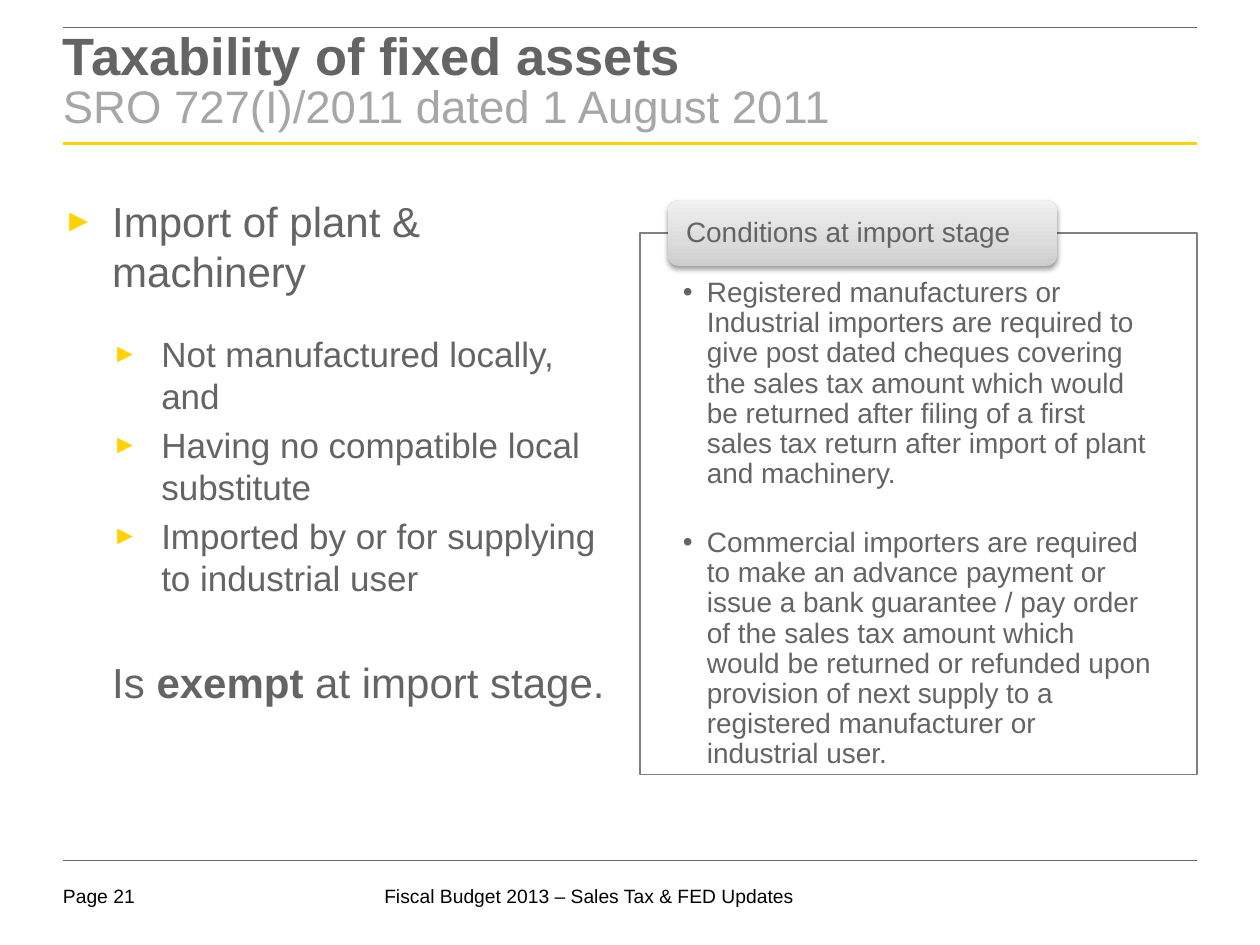
from lxml import etree
from pptx import Presentation
from pptx import util as u
from pptx.dml.color import RGBColor
from pptx.enum import shapes, text
from pptx.oxml import parse_xml
from pptx.oxml.ns import qn

PX = 9144
NS = 'xmlns:a="http://schemas.openxmlformats.org/drawingml/2006/main"'
HUE = {"gray": "646464", "pale": "A6A6A6", "gold": "FFD200", "edge": "808080",
       "white": "FFFFFF", "black": "000000"}


def frame(shape, pad, anchor=text.MSO_ANCHOR.TOP):
    tf = shape.text_frame
    tf.word_wrap = True
    tf.vertical_anchor = anchor
    tf.margin_left, tf.margin_top, tf.margin_right, tf.margin_bottom = [n * PX for n in pad]
    return tf


def write(para, words, size, hue="gray", bold=False):
    run = para.add_run()
    run.text = words
    run.font.name = "Arial"
    run.font.size = u.Pt(size)
    run.font.bold = bold
    run.font.color.rgb = RGBColor.from_string(HUE[hue])


deck = Presentation()
deck.slide_width, deck.slide_height = 1000 * PX, 750 * PX
slide = deck.slides.add_slide(deck.slide_layouts[6])
art = slide.shapes

for y, hue, width in [(22, "gray", 0.5), (114, "gold", 1.5), (683, "gray", 0.25)]:
    rule = art.add_connector(shapes.MSO_CONNECTOR.STRAIGHT, 50 * PX, y * PX, 950 * PX, y * PX)
    rule.line.color.rgb = RGBColor.from_string(HUE[hue])
    rule.line.width = u.Pt(width)
    etree.SubElement(rule._element.spPr, qn("a:effectLst"))

for x, width, words in [(50, 73, "Page 21"),
                        (305, 370, "Fiscal Budget 2013 – Sales Tax & FED Updates")]:
    foot = art.add_textbox(x * PX, 702 * PX, width * PX, 22 * PX)
    write(frame(foot, (0, 0, 0, 0)).paragraphs[0], words, 11, "black")

title = art.add_textbox(50 * PX, 22 * PX, 900 * PX, 94 * PX)
para = frame(title, (0, 4, 0, 0)).paragraphs[0]
para.line_spacing = 0.85
write(para, "Taxability of fixed assets", 30, bold=True)
para.add_line_break()
write(para, "SRO 727(I)/2011 dated 1 August 2011", 26, "pale")

body = art.add_textbox(50 * PX, 155 * PX, 442 * PX, 494 * PX)
panel = art.add_shape(shapes.MSO_SHAPE.RECTANGLE, 508 * PX, 185 * PX, 442 * PX, 430 * PX)
panel.shadow.inherit = False
panel.fill.solid()
panel.fill.fore_color.rgb = RGBColor.from_string(HUE["white"])
tint = panel._element.spPr.find(qn("a:solidFill"))[0]
etree.SubElement(tint, qn("a:alpha"), val="90000")
panel.line.color.rgb = RGBColor.from_string(HUE["edge"])
panel.line.width = u.Pt(0.75)

left = frame(body, (0, 0, 0, 0))
right = frame(panel, (34, 36, 34, 12))
gold = f'<a:buClr {NS}><a:srgbClr val="{HUE["gold"]}"/></a:buClr>'
small = f'<a:buSzPct {NS} val="75000"/>'
arrow = [gold, small, f'<a:buFont {NS} typeface="Arial"/>', f'<a:buChar {NS} char="►"/>']
dot = [f'<a:buFont {NS} typeface="Arial"/>', f'<a:buChar {NS} char="•"/>']
items = [
    (left, 0, 39, 39, 0, 24, arrow, [("Import of plant & machinery", False)]),
    (left, 1, 78, 39, 21, 20, arrow, [("Not manufactured locally, and", False)]),
    (left, 1, 78, 39, 4, 20, arrow, [("Having no compatible local substitute", False)]),
    (left, 1, 78, 39, 4, 20, arrow, [("Imported by or for supplying to industrial user", False)]),
    (left, 0, 39, 0, 33, 24, [],
     [("Is ", False), ("exempt", True), (" at import stage.", False)]),
    (right, 1, 19, 19, 0, 16, dot,
     [("Registered manufacturers or Industrial importers are required to give post dated "
       "cheques covering the sales tax amount which would be returned after filing of a first "
       "sales tax return after import of plant and machinery.", False)]),
    (right, 1, 19, 19, 22, 16, dot,
     [("Commercial importers are required to make an advance payment or issue a bank guarantee "
       "/ pay order of the sales tax amount which would be returned or refunded upon provision "
       "of next supply to a registered manufacturer or industrial user.", False)]),
]
for tf, level, indent, hang, gap, size, marks, runs in items:
    para = tf.add_paragraph() if tf.paragraphs[0].runs else tf.paragraphs[0]
    para.level = level
    para.alignment = text.PP_ALIGN.LEFT
    para.space_before = u.Pt(gap)
    if tf is right:
        para.line_spacing = 0.9
    props = para._p.get_or_add_pPr()
    props.set("marL", str(indent * PX))
    props.set("indent", str(-hang * PX))
    for mark in marks:
        props.append(parse_xml(mark))
    for words, bold in runs:
        write(para, words, size, bold=bold)

tab = art.add_shape(shapes.MSO_SHAPE.ROUNDED_RECTANGLE, 530 * PX, 159 * PX, 309 * PX, 52 * PX)
tab.line.fill.background()
tab.fill.gradient()
props = tab._element.spPr
stops = "".join(f'<a:gs pos="{at}000"><a:srgbClr val="{hue}"/></a:gs>'
                for at, hue in [(0, "CDCDCD"), (35, "DBDBDB"), (100, "F1F1F1")])
props.replace(props.find(qn("a:gradFill")), parse_xml(
    f'<a:gradFill {NS} rotWithShape="1"><a:gsLst>{stops}</a:gsLst>'
    '<a:lin ang="16200000" scaled="0"/></a:gradFill>'))
props.append(parse_xml(
    f'<a:effectLst {NS}><a:outerShdw blurRad="{u.Pt(3.1)}" dist="{u.Pt(1.6)}" dir="5400000" '
    f'rotWithShape="0"><a:srgbClr val="{HUE["black"]}"><a:alpha val="38000"/></a:srgbClr>'
    '</a:outerShdw></a:effectLst>'))
para = frame(tab, (12, 0, 12, 0), text.MSO_ANCHOR.MIDDLE).paragraphs[0]
para.alignment = text.PP_ALIGN.LEFT
para.line_spacing = 0.9
write(para, "Conditions at import stage", 16)

deck.save("out.pptx")
